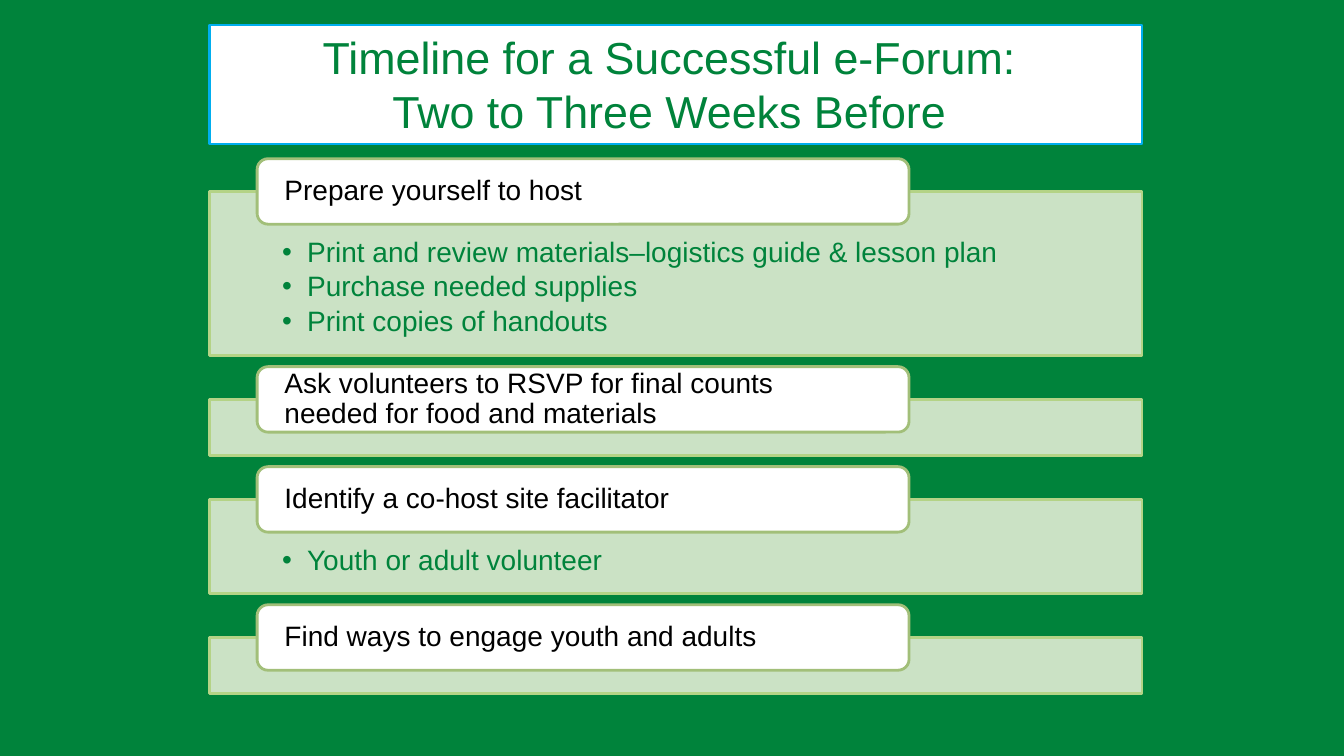
import pptx
import pptx.dml.color
import pptx.enum.shapes
import pptx.enum.text
import pptx.oxml
import pptx.oxml.ns
import pptx.util
from lxml import etree

Cm, Pt = pptx.util.Cm, pptx.util.Pt
RGB = pptx.dml.color.RGBColor.from_string
SHAPE = pptx.enum.shapes.MSO_SHAPE
ANCHOR = pptx.enum.text.MSO_ANCHOR
ALIGN = pptx.enum.text.PP_ALIGN

TITLE = "Timeline for a Successful e-Forum: \vTwo to Three Weeks Before "
STEPS = [
    ("Prepare yourself to host", [
        "Print and review materials–logistics guide & lesson plan",
        "Purchase needed supplies",
        "Print copies of handouts",
    ]),
    ("Ask volunteers to RSVP for final counts \vneeded for food and materials", []),
    ("Identify a co-host site facilitator", ["Youth or adult volunteer"]),
    ("Find ways to engage youth and adults", []),
]

THEME = {
    "font": "Arial", "title_size": 32, "body_size": 20, "line_width": 2,
    "green": "00833B", "white": "FFFFFF", "black": "000000",
    "title_line": "00AEEF", "panel": "E5EED7", "panel_alpha": 89,
    "panel_line": "B4D386", "tab_line": "A2BF79",
}

# All lengths in centimetres
LEFT, WIDTH = 5.28, 23.5
TITLE_TOP, TITLE_H = 0.63, 3.0
FIRST_PANEL, PANEL_GAP = 4.83, 1.12
EMPTY_H, BASE_H, BULLET_H = 1.4, 1.48, 0.88
TAB_LEFT, TAB_W, TAB_H, TAB_RISE = 6.48, 16.43, 1.65, 0.83
INDENT = 0.63


def add_box(s, kind, box, fill, line, insets, anchor=ANCHOR.TOP):
    sp = s.shapes.add_shape(kind, *[Cm(v) for v in box])
    sp.shadow.inherit = False
    sp.fill.solid()
    sp.fill.fore_color.rgb = RGB(THEME[fill])
    sp.line.color.rgb = RGB(THEME[line])
    sp.line.width = Pt(THEME["line_width"])
    tf = sp.text_frame
    margins = zip(("left", "top", "right", "bottom"), insets)
    settings = {f"margin_{side}": Cm(v) for side, v in margins}
    for name, value in {**settings, "word_wrap": True, "vertical_anchor": anchor}.items():
        setattr(tf, name, value)
    return sp


def write(p, text, size, color, **layout):
    p.text = text
    for name, value in layout.items():
        setattr(p, name, value)
    for r in p.runs:
        for name, value in {"name": THEME["font"], "size": Pt(THEME[size])}.items():
            setattr(r.font, name, value)
        r.font.color.rgb = RGB(THEME[color])


def add_bullet(p):
    pPr = p._p.get_or_add_pPr()
    pPr.set("marL", str(Cm(INDENT)))
    pPr.set("indent", str(-Cm(INDENT)))
    qn = pptx.oxml.ns.qn
    color = etree.SubElement(pPr, qn("a:buClr"))
    etree.SubElement(color, qn("a:srgbClr"), val=THEME["green"])
    etree.SubElement(pPr, qn("a:buFont"), typeface=THEME["font"])
    etree.SubElement(pPr, qn("a:buChar"), char="•")


def add_panel(s, top, height, bullets):
    sp = add_box(s, SHAPE.RECTANGLE, (LEFT, top, WIDTH, height),
                 "panel", "panel_line", (1.83, 1.17, 1.83, 0.41))
    color = sp.fill._xPr.find(".//" + pptx.oxml.ns.qn("a:srgbClr"))
    etree.SubElement(color, pptx.oxml.ns.qn("a:alpha"),
                     val=str(THEME["panel_alpha"] * 1000))
    tf = sp.text_frame
    for i, text in enumerate(bullets):
        p = tf.add_paragraph() if i else tf.paragraphs[0]
        write(p, text, "body_size", "green", alignment=ALIGN.LEFT,
              line_spacing=0.9, space_before=Pt(3 if i else 0))
        add_bullet(p)


def add_tab(s, top, heading):
    sp = add_box(s, SHAPE.ROUNDED_RECTANGLE, (TAB_LEFT, top, TAB_W, TAB_H),
                 "white", "tab_line", (0.61, 0, 0.61, 0), ANCHOR.MIDDLE)
    write(sp.text_frame.paragraphs[0], heading, "body_size", "black",
          alignment=ALIGN.LEFT, line_spacing=0.9)


def main():
    prs = pptx.Presentation()
    prs.slide_width, prs.slide_height = Cm(33.87), Cm(19.05)
    s = prs.slides.add_slide(prs.slide_layouts[6])
    s.background.fill.solid()
    s.background.fill.fore_color.rgb = RGB(THEME["green"])

    title = add_box(s, SHAPE.RECTANGLE, (LEFT, TITLE_TOP, WIDTH, TITLE_H),
                    "white", "title_line", (0.25, 0.13, 0.25, 0.13))
    write(title.text_frame.paragraphs[0], TITLE, "title_size", "green",
          alignment=ALIGN.CENTER)

    top = FIRST_PANEL
    for heading, bullets in STEPS:
        height = BASE_H + BULLET_H * len(bullets) if bullets else EMPTY_H
        add_panel(s, top, height, bullets)
        add_tab(s, top - TAB_RISE, heading)
        top += height + PANEL_GAP

    prs.save("out.pptx")


if __name__ == "__main__":
    main()
